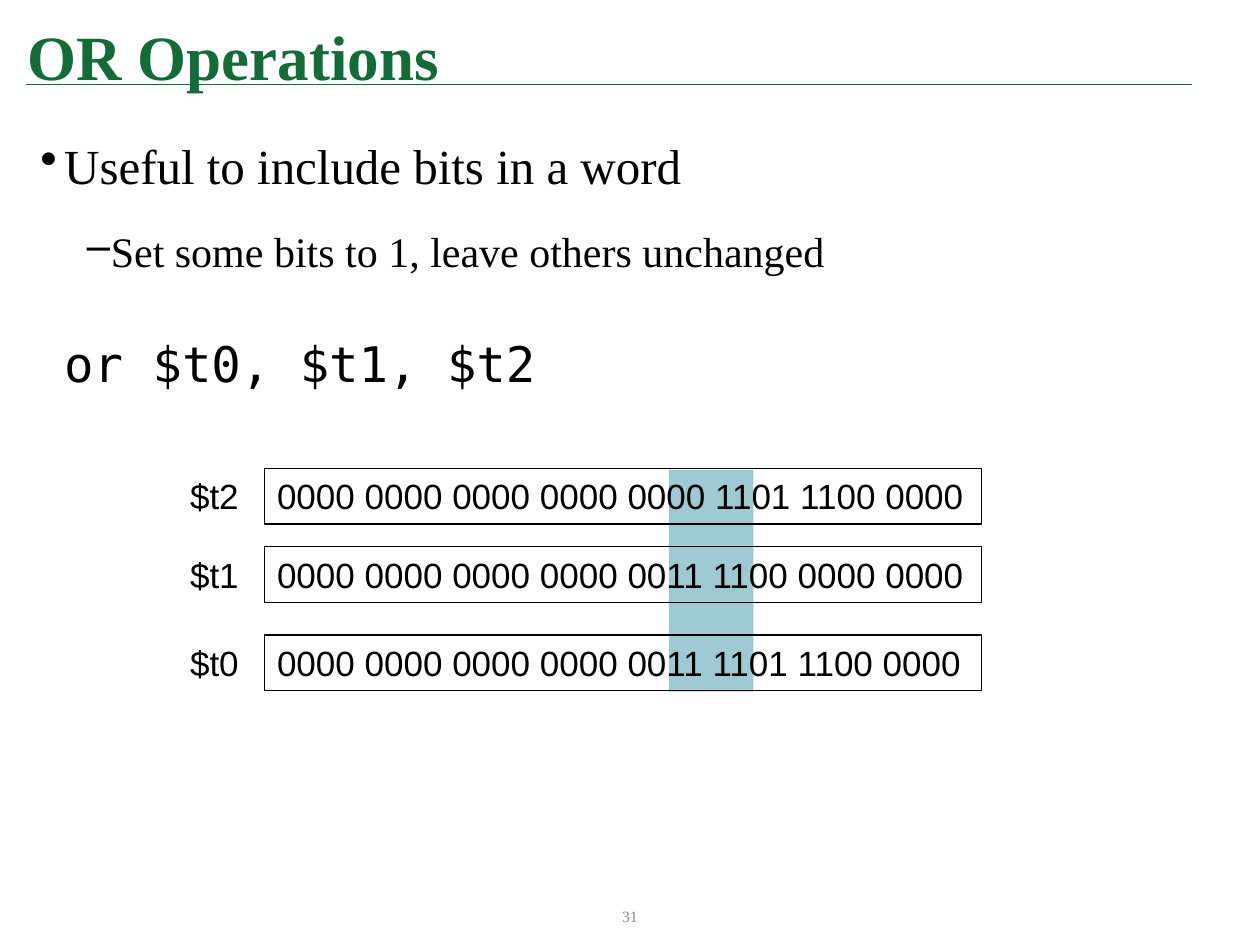
import dataclasses

import pptx
import pptx.dml.color
import pptx.enum.shapes
import pptx.enum.text
import pptx.oxml.xmlchemy
import pptx.util

IN = pptx.util.Inches
ALIGN = pptx.enum.text.PP_ALIGN
ANCHOR = pptx.enum.text.MSO_ANCHOR
SHAPE = pptx.enum.shapes.MSO_SHAPE


@dataclasses.dataclass(frozen=True)
class Theme:
    """Colours, fonts and type sizes of the slide."""
    green: str = "146A39"
    black: str = "000000"
    grey: str = "8C8C8C"
    band: str = "9FCAD3"
    serif: str = "Times New Roman"
    sans: str = "Arial"
    mono: str = "DejaVu Sans Mono"
    title: int = 36
    main: int = 28
    sub: int = 24
    bits: int = 20
    number: int = 9


T = Theme()
LABEL_X, BITS_X, BITS_W, ROW_H = 1.41, 2.1, 5.69, 0.44
REGISTERS = [
    ("$t2", "0000 0000 0000 0000 0000 1101 1100 0000", 3.72),
    ("$t1", "0000 0000 0000 0000 0011 1100 0000 0000", 4.34),
    ("$t0", "0000 0000 0000 0000 0011 1101 1100 0000", 5.04),
]


def rgb(value):
    """Turn a hex string into a colour."""
    return pptx.dml.color.RGBColor.from_string(value)


def element(tag):
    """Make an empty XML element."""
    return pptx.oxml.xmlchemy.OxmlElement(tag)


def apply(obj, **values):
    """Set each given attribute on an object."""
    for name, value in values.items():
        setattr(obj, name, value)


def write(p, text, size, font, color=T.black, bold=False):
    """Put one formatted run into a paragraph."""
    r = p.add_run()
    r.text = text
    apply(r.font, size=pptx.util.Pt(size), name=font, bold=bold)
    r.font.color.rgb = rgb(color)


def add_box(s, left, top, width, height, **frame):
    """Add a text box and return its text frame."""
    sp = s.shapes.add_textbox(IN(left), IN(top), IN(width), IN(height))
    apply(sp.text_frame, **frame)
    return sp.text_frame


def add_rect(s, left, top, width, height, fill=None, line=None):
    """Add a flat rectangle with an optional fill and outline."""
    sp = s.shapes.add_shape(SHAPE.RECTANGLE, IN(left), IN(top), IN(width), IN(height))
    sp.shadow.inherit = False
    if fill:
        sp.fill.solid()
        sp.fill.fore_color.rgb = rgb(fill)
    else:
        sp.fill.background()
    if line:
        sp.line.color.rgb = rgb(line)
        sp.line.width = pptx.util.Pt(0.75)
    else:
        sp.line.fill.background()
    return sp


def add_title(s, text):
    """Fill the title placeholder and draw the rule beneath it."""
    rule = s.shapes.add_connector(
        pptx.enum.shapes.MSO_CONNECTOR.STRAIGHT, IN(0.21), IN(0.67), IN(9.46), IN(0.67))
    rule.line.color.rgb = rgb(T.green)
    rule.line.width = pptx.util.Pt(1)
    rule._element.spPr.append(element("a:effectLst"))
    sp = s.shapes.title
    apply(sp, left=IN(0.12), top=IN(0.07), width=IN(9.19), height=IN(0.73))
    apply(sp.text_frame, vertical_anchor=ANCHOR.BOTTOM, word_wrap=True,
          margin_bottom=IN(0.06))
    p = sp.text_frame.paragraphs[0]
    p.alignment = ALIGN.LEFT
    write(p, text, T.title, T.serif, T.green, True)


def add_item(p, text, size, font, left, bullet=None, before=0):
    """Write one body paragraph with an optional hanging bullet."""
    pPr = p._p.get_or_add_pPr()
    pPr.set("marL", str(IN(left)))
    pPr.set("indent", str(IN(-0.19) if bullet else 0))
    apply(p, line_spacing=1.5, space_before=pptx.util.Pt(before))
    bu = element("a:buChar" if bullet else "a:buNone")
    if bullet:
        bu.set("char", bullet)
    pPr.append(bu)
    write(p, text, size, font)


def add_body(s):
    """Add the two bullets and the instruction."""
    tf = add_box(s, 0.23, 0.72, 9.56, 6.1, word_wrap=True,
                 margin_left=IN(0.09), margin_top=IN(0.12))
    add_item(tf.paragraphs[0], "Useful to include bits in a word",
             T.main, T.serif, 0.19, "•")
    p = tf.add_paragraph()
    p.level = 1
    add_item(p, "Set some bits to 1, leave others unchanged",
             T.sub, T.serif, 0.56, "–", 3.7)
    add_item(tf.add_paragraph(), "or $t0, $t1, $t2", T.main, T.mono, 0.19, before=16)


def add_register(s, name, bits, top):
    """Add a register label and its outlined bit pattern."""
    sp = add_rect(s, BITS_X, top, BITS_W, ROW_H, line=T.black)
    label = add_box(s, LABEL_X, top, 0.59, ROW_H)
    for tf, text in ((sp.text_frame, bits), (label, name)):
        apply(tf, word_wrap=False, vertical_anchor=ANCHOR.TOP)
        tf.paragraphs[0].alignment = ALIGN.LEFT
        write(tf.paragraphs[0], text, T.bits, T.sans)


def add_number(s, text):
    """Add the centred page number."""
    tf = add_box(s, 3.73, 7.07, 2.54, 0.4, word_wrap=True, vertical_anchor=ANCHOR.MIDDLE)
    tf.paragraphs[0].alignment = ALIGN.CENTER
    write(tf.paragraphs[0], text, T.number, T.serif, T.grey)


def main():
    """Build and save the slide."""
    prs = pptx.Presentation()
    apply(prs, slide_width=IN(10), slide_height=IN(7.5))
    s = prs.slides.add_slide(prs.slide_layouts[5])
    add_title(s, "OR Operations")
    add_body(s)
    add_number(s, "31")
    add_rect(s, 5.31, 3.73, 0.67, 1.76, fill=T.band)
    for register in REGISTERS:
        add_register(s, *register)
    prs.save("out.pptx")


if __name__ == "__main__":
    main()
